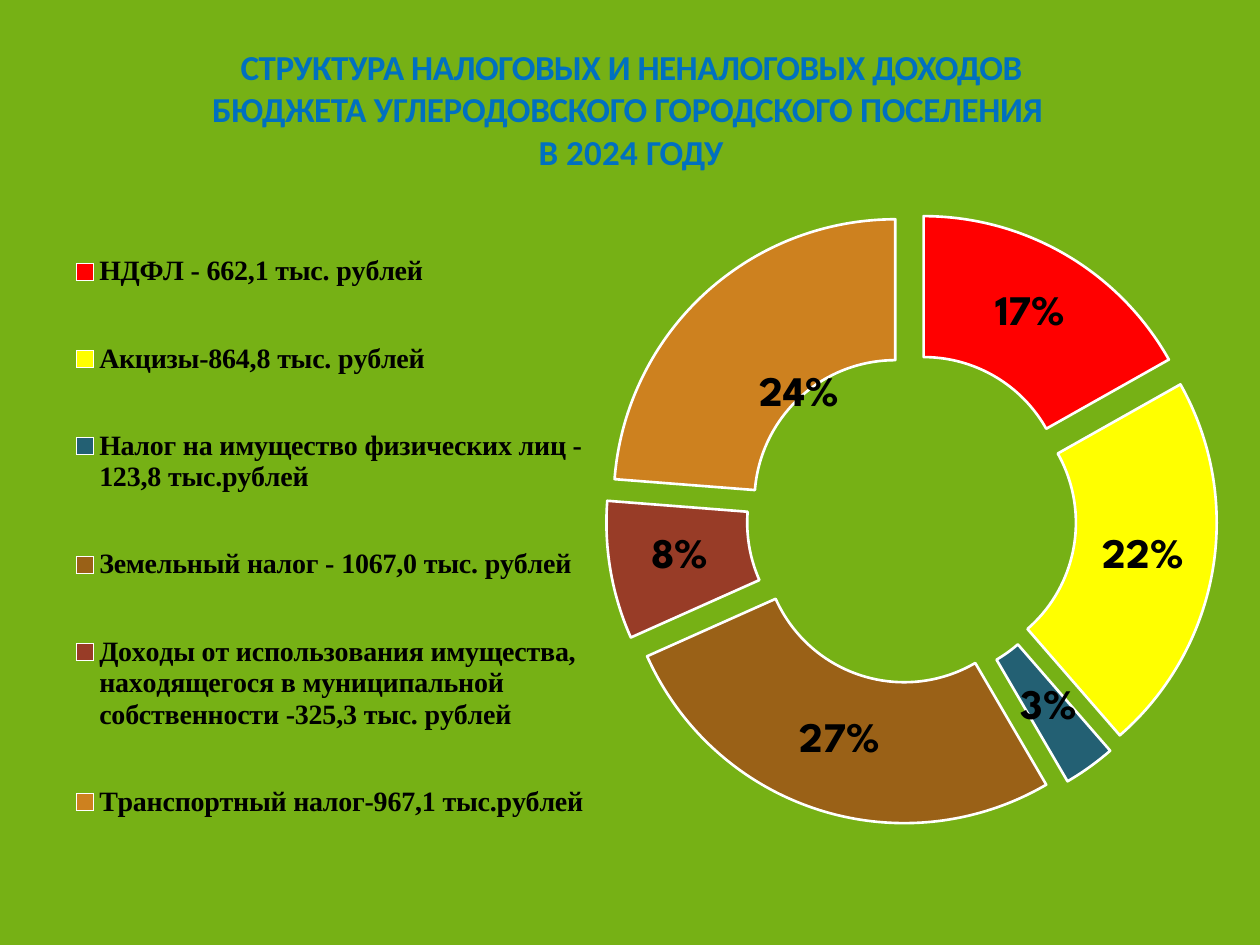
from dataclasses import dataclass

from lxml import etree
from pptx import Presentation
from pptx.chart.data import CategoryChartData
from pptx.dml.color import RGBColor
from pptx.enum.chart import XL_CHART_TYPE as ChartType, XL_LEGEND_POSITION as LegendPosition
from pptx.enum.shapes import MSO_SHAPE as Preset
from pptx.enum.text import MSO_ANCHOR as Anchor, PP_ALIGN as Align
from pptx.oxml.ns import qn
from pptx.util import Pt

EMU_PER_PX = 914400 / 126


@dataclass(frozen=True)
class Theme:
    """Colours, fonts and type sizes of the slide."""
    ground: str = "76B115"
    heading: str = "0070C0"
    ink: str = "000000"
    edge: str = "FFFFFF"
    heading_font: str = "Calibri"
    label_font: str = "League Spartan"
    legend_font: str = "Times New Roman"
    heading_size: int = 20
    label_size: int = 24
    legend_size: int = 16
    base_size: int = 10
    edge_width: float = 1.5


INCOME = [
    ("НДФЛ - 662,1 тыс. рублей", 17, "FF0000"),
    ("Акцизы-864,8 тыс. рублей", 22, "FFFF00"),
    ("Налог на имущество физических лиц - 123,8 тыс.рублей", 3, "236073"),
    ("Земельный налог - 1067,0 тыс. рублей", 27, "9A6117"),
    ("Доходы от использования имущества, находящегося в муниципальной "
     "собственности -325,3 тыс. рублей", 8, "983C27"),
    ("Транспортный налог-967,1 тыс.рублей", 24, "CD811F"),
]
HEADING = [
    [("СТРУКТУРА НАЛОГОВЫХ И НЕНАЛОГОВЫХ ДОХОДОВ ", -30),
     ("БЮДЖЕТА УГЛЕРОДОВСКОГО ГОРОДСКОГО ПОСЕЛЕНИЯ ", -20)],
    [("В ", 0), ("2024 ", 10), ("ГОДУ", -40)],
]


def px(length):
    """Turn pixels into EMU."""
    return round(length * EMU_PER_PX)


def style_font(font, name, size, color, bold=False):
    """Set the family, size, colour and weight of a font."""
    font.name, font.size, font.bold = name, Pt(size), bold
    font.color.rgb = RGBColor.from_string(color)


def add_span(para, text, tracking=0, **style):
    """Add a run of text with its format."""
    span = para.add_run()
    span.text = text
    style_font(span.font, **style)
    span.font._element.set("spc", str(tracking))


def make_layout(target=None, **places):
    """Build a manual chart layout from fractions of the chart."""
    layout = etree.Element(qn("c:layout"))
    manual = etree.SubElement(layout, qn("c:manualLayout"))
    if target:
        etree.SubElement(manual, qn("c:layoutTarget"), val=target)
        modes = ("xMode", "yMode")
    else:
        modes = ("xMode", "yMode") if "w" in places else ()
    for mode in modes:
        etree.SubElement(manual, qn(f"c:{mode}"), val="edge")
    for side, value in places.items():
        etree.SubElement(manual, qn(f"c:{side}"), val=str(value))
    return layout


def place(element, layout, after):
    """Put a layout behind a named child in place of an earlier one."""
    for old in element.findall(qn("c:layout")):
        element.remove(old)
    if after:
        element.find(qn(after)).addnext(layout)
    else:
        element.insert(0, layout)


class SlideMaker:
    """Draws the elements of one slide in one theme."""

    def __init__(self, page, theme):
        """Keep the slide and the theme."""
        self.page, self.theme = page, theme

    def backdrop(self, width, height):
        """Cover the slide with a plain rectangle behind everything."""
        box = self.page.shapes.add_shape(Preset.RECTANGLE, 0, 0, px(width), px(height))
        box.shadow.inherit = False
        box.fill.solid()
        box.fill.fore_color.rgb = RGBColor.from_string(self.theme.ground)
        box.line.fill.background()
        self.page.shapes._spTree.insert(2, box._element)

    def title(self, paragraphs, left, top, width, height):
        """Fill and place the title."""
        box = self.page.shapes.title
        box.left, box.top, box.width, box.height = map(px, (left, top, width, height))
        frame = box.text_frame
        frame.word_wrap = True
        frame.vertical_anchor = Anchor.TOP
        frame.margin_left = frame.margin_right = frame.margin_bottom = 0
        frame.margin_top = px(3)
        for index, spans in enumerate(paragraphs):
            para = frame.add_paragraph() if index else frame.paragraphs[0]
            para.alignment = Align.CENTER
            para.space_before = Pt(1 if index else 0)
            for text, tracking in spans:
                add_span(para, text, tracking, name=self.theme.heading_font,
                         size=self.theme.heading_size, color=self.theme.heading, bold=True)

    def doughnut(self, rows, left, top, width, height):
        """Add an exploded ring chart with percent labels and a legend at its left."""
        theme = self.theme
        names, values, colors = zip(*rows)
        data = CategoryChartData()
        data.categories = names
        data.add_series("Series 1", values)
        chart = self.page.shapes.add_chart(
            ChartType.DOUGHNUT_EXPLODED, *map(px, (left, top, width, height)), data).chart
        style_font(chart.font, theme.label_font, theme.base_size, theme.edge)
        chart.has_title = False
        plot = chart.plots[0]
        plot.vary_by_categories = True
        plot._element.find(qn("c:holeSize")).set("val", "61")
        place(chart._chartSpace.chart.plotArea,
              make_layout("inner", x=0.48, y=0.03, w=0.52, h=0.89), None)
        self.slices(plot.series[0], colors)
        self.labels(plot.series[0], len(rows) - 1)
        self.legend(chart)

    def slices(self, series, colors):
        """Colour the slices and pull them apart."""
        outline = series.format.line
        outline.color.rgb = RGBColor.from_string(self.theme.edge)
        for old in series._element.findall(qn("c:explosion")):
            series._element.remove(old)
        explosion = etree.Element(qn("c:explosion"), val="17")
        series._element.find(qn("c:spPr")).addnext(explosion)
        for index, color in enumerate(colors):
            look = series.points[index].format
            look.fill.solid()
            look.fill.fore_color.rgb = RGBColor.from_string(color)
            look.line.color.rgb = RGBColor.from_string(self.theme.edge)
            look.line.width = Pt(self.theme.edge_width)

    def labels(self, series, moved):
        """Show percentages and shift one label towards the middle."""
        style = dict(name=self.theme.label_font, size=self.theme.label_size,
                     color=self.theme.ink, bold=True)
        labels = series.data_labels
        labels.show_percentage, labels.show_value = True, False
        style_font(labels.font, **style)
        style_font(series.points[moved].data_label.font, **style)
        label = labels._element.find(qn("c:dLbl"))
        place(label, make_layout(x=0.04, y=0.07), "c:idx")
        label.find(qn("c:showVal")).set("val", "0")
        label.find(qn("c:showPercent")).set("val", "1")

    def legend(self, chart):
        """Place the legend in the left half of the chart."""
        chart.has_legend = True
        legend = chart.legend
        legend.position = LegendPosition.BOTTOM
        legend.include_in_layout = False
        style_font(legend.font, self.theme.legend_font, self.theme.legend_size,
                   self.theme.ink, True)
        place(legend._element, make_layout(x=0.02, y=0.04, w=0.45, h=0.92), "c:legendPos")


def main():
    """Build the slide and save the deck."""
    deck = Presentation()
    deck.slide_width, deck.slide_height = px(1260), px(945)
    page = deck.slides.add_slide(deck.slide_layouts[5])
    maker = SlideMaker(page, Theme())
    maker.backdrop(1260, 945)
    maker.title(HEADING, 173, 42, 916, 131)
    maker.doughnut(INCOME, 42, 171, 1176, 732)
    deck.save("out.pptx")


if __name__ == "__main__":
    main()
